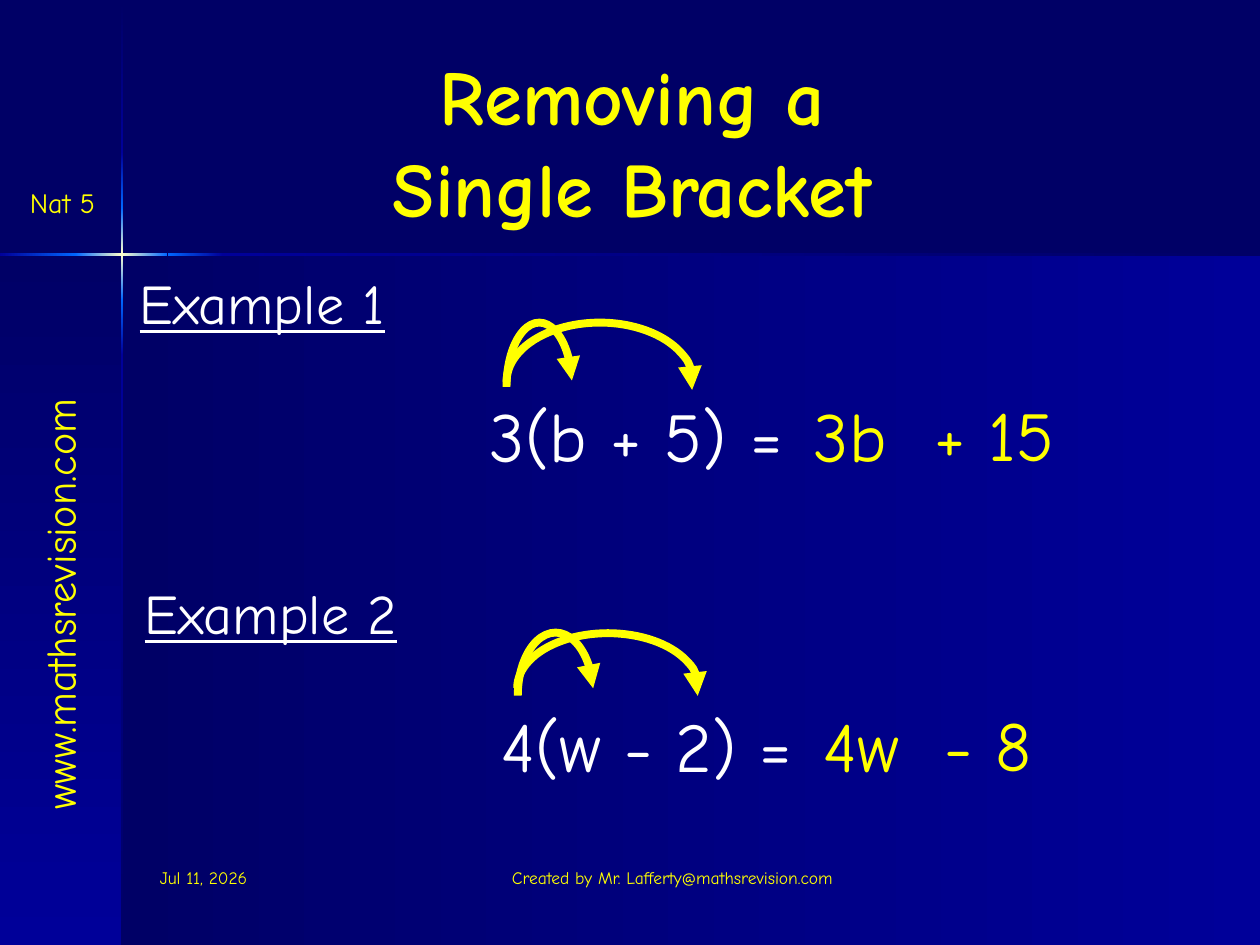
from copy import deepcopy
from lxml.etree import SubElement as Sub
from pptx import Presentation
from pptx.dml.color import RGBColor as Rgb
from pptx.enum.shapes import MSO_SHAPE as Kind
from pptx.enum.text import MSO_ANCHOR as Anchor, MSO_AUTO_SIZE as Fit, PP_ALIGN as Align
from pptx.oxml.ns import qn
from pptx.util import Inches, Pt

COLS, ROWS = 100, 75
WIDE, HIGH = Inches(10), Inches(7.5)
FONT = "Comic Neue"
INK = {"night": "000066", "navy": "000099", "blue": "0066FF",
       "glow": "FFFFCC", "sun": "FFFF00", "white": "FFFFFF"}


def tint(name):
    return Rgb.from_string(INK[name])


def cells(left, top, wide, high):
    return [round(left * WIDE / COLS), round(top * HIGH / ROWS),
            round(wide * WIDE / COLS), round(high * HIGH / ROWS)]


def add_panel(slide, box, names, down):
    panel = slide.shapes.add_shape(Kind.RECTANGLE, *cells(*box))
    panel.shadow.inherit = False
    panel.line.fill.background()
    fill = panel.fill
    fill.gradient()
    fill.gradient_angle = 270 if down else 0
    stops = panel._element.spPr.find(".//" + qn("a:gsLst"))
    for _ in names[2:]:
        stops.append(deepcopy(stops[-1]))
    for i, (stop, name) in enumerate(zip(fill.gradient_stops, names)):
        stop.color.rgb = tint(name)
        stop.position = i / (len(names) - 1)


def add_text(slide, box, text, size, name="sun", align=Align.LEFT, wrap=False,
             bold=False, line=False, turn=0, anchor=Anchor.TOP):
    shape = slide.shapes.add_textbox(*cells(*box))
    shape.rotation = turn
    frame = shape.text_frame
    frame.word_wrap = wrap
    frame.auto_size = Fit.NONE if wrap else Fit.SHAPE_TO_FIT_TEXT
    frame.vertical_anchor = anchor
    frame.text = text
    for para in frame.paragraphs:
        para.alignment = align
        for run in para.runs:
            font = run.font
            font.name, font.size = FONT, Pt(size)
            font.bold, font.underline = bold, line
            font.color.rgb = tint(name)


def add_arc(slide, box, end):
    arc = slide.shapes.add_shape(Kind.ARC, *cells(*box))
    arc.rotation = 270
    arc.shadow.inherit = False
    arc.fill.background()
    for i, angle in enumerate((270, end)):
        arc.adjustments[i] = angle * 0.6
    arc.line.color.rgb = tint("sun")
    arc.line.width = Pt(4.5)
    Sub(arc.line._get_or_add_ln(), qn("a:tailEnd"), type="triangle")


def add_back(slide):
    slide.background.fill.solid()
    slide.background.fill.fore_color.rgb = tint("night")
    dim = ["night", "navy"]
    rise = ["navy", "blue"]
    star = ["blue", "glow", "blue"]
    add_panel(slide, (9.7, 20.2, 90.3, 54.8), dim, False)
    add_panel(slide, (0, 20.2, 9.7, 54.8), dim, True)
    for top, high, names in ((0.1, 12, dim), (28.2, 46.8, dim[::-1]),
                             (23.8, 4.4, rise[::-1]), (12.1, 4.4, rise),
                             (16.5, 7.3, star)):
        add_panel(slide, (9.6, top, 0.2, high), names, True)
    for left, wide, names in ((17.7, 82.3, dim[::-1]), (0, 6.1, rise),
                              (13.3, 4.4, rise[::-1]), (6, 7.3, star)):
        add_panel(slide, (left, 20.1, wide, 0.2), names, False)


def add_sum(slide, title, parts, arcs):
    left, top, wide, text = title
    add_text(slide, (left, top, wide, 6.4), text, 32, "white", line=True)
    for (left, top, wide, text), name in zip(parts, ("white", "sun", "sun")):
        add_text(slide, (left, top, wide, 7.7), text, 40, name)
    for box, end in zip(arcs, (79, 95)):
        add_arc(slide, box, end)


def main():
    deck = Presentation()
    deck.slide_width, deck.slide_height = WIDE, HIGH
    slide = deck.slides.add_slide(deck.slide_layouts[6])
    add_back(slide)
    add_text(slide, (-14.3, 43.7, 38, 5), "www.mathsrevision.com", 24, turn=270)
    add_text(slide, (1, 14.2, 7.9, 3.7), "Nat 5", 16, align=Align.CENTER)
    add_sum(slide, (10.1, 20.8, 22.5, "Example 1"),
            [(37.9, 30.7, 26.6, "3(b + 5) ="), (63.6, 30.7, 8.7, "3b"),
             (71.3, 30.6, 13.8, " + 15")],
            [(37.7, 28.1, 10.2, 5.2), (42.9, 22.9, 9.4, 14.8)])
    add_sum(slide, (10.5, 45.4, 23.2, "Example 2"),
            [(38.8, 55.3, 26.7, "4(w - 2) ="), (64.4, 55.3, 9.2, "4w"),
             (72.1, 55.2, 11, " - 8")],
            [(39.1, 52.2, 10, 6), (43.9, 47.4, 8.7, 14.4)])
    add_text(slide, (11.7, 68.3, 20.8, 5), "Jul 11, 2026", 10, wrap=True)
    add_text(slide, (37.5, 68.3, 31.7, 5), "Created by Mr. Lafferty@mathsrevision.com",
             10, align=Align.CENTER, wrap=True)
    add_text(slide, (20.2, 3.3, 60, 15.7), "Removing a\nSingle Bracket", 44,
             align=Align.CENTER, wrap=True, bold=True, anchor=Anchor.BOTTOM)
    deck.save("out.pptx")


if __name__ == "__main__":
    main()
